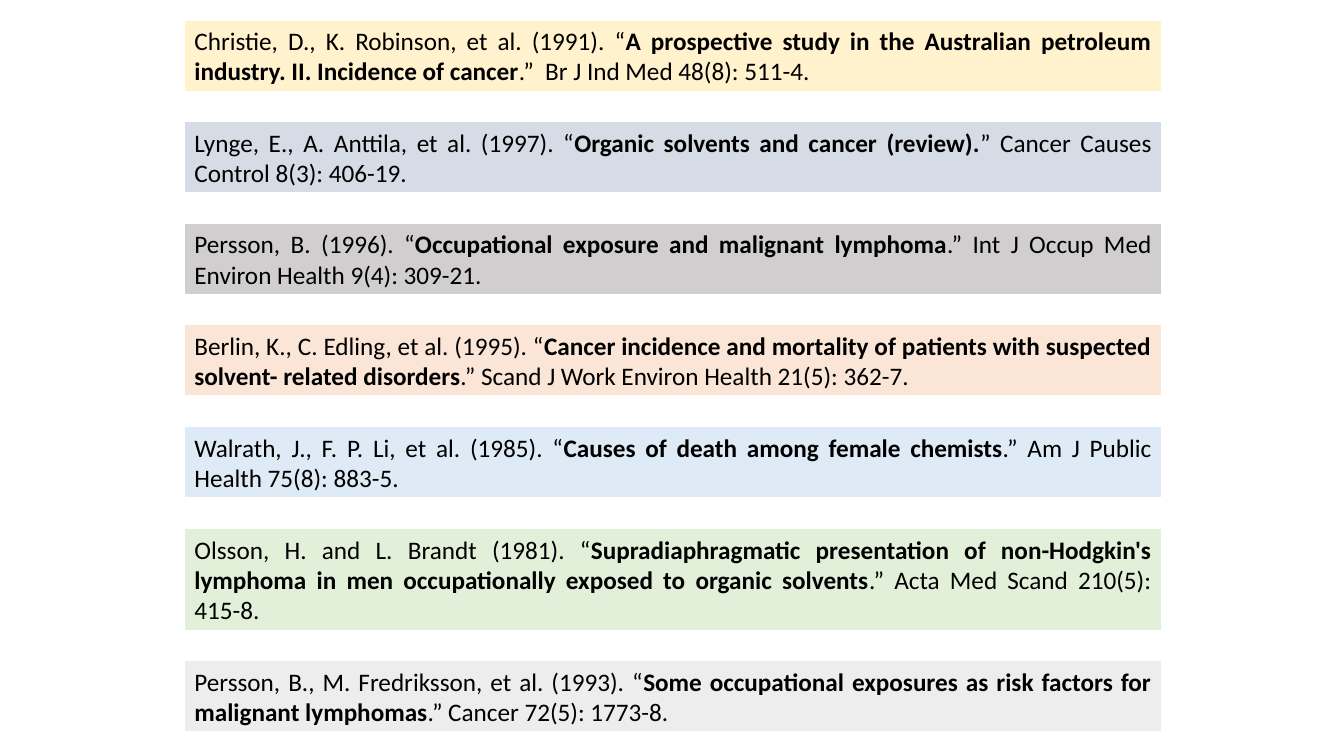
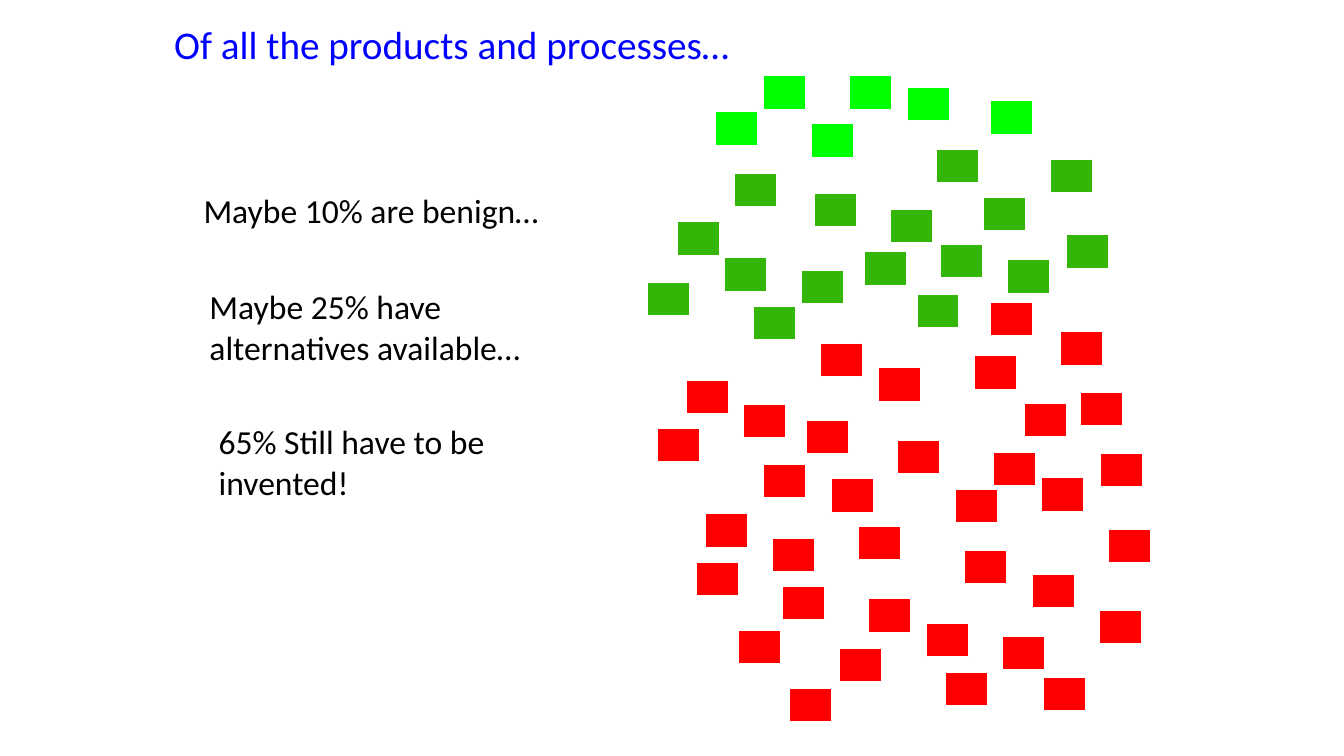
"""Build two slides: solvent and cancer references, and a chart of scattered product tiles."""
from dataclasses import dataclass

from pptx import Presentation
from pptx import util as u
from pptx.dml.color import RGBColor
from pptx.enum import shapes, text

COLOURS = {
    "white": "FFFFFF", "black": "000000", "title": "0000FF",
    "cream": "FFF2CC", "slate": "D6DCE5", "stone": "D0CECE", "peach": "FBE5D6",
    "sky": "DEEBF7", "mint": "E2F0D9", "mist": "EDEDED",
    "benign": "00FF00", "alternative": "34B606", "uninvented": "FF0000",
}
FONT = "Calibri"
SLIDE_WIDTH, SLIDE_HEIGHT = 33.87, 19.05
BAND_LEFT, BAND_TOP, BAND_WIDTH, BAND_GAP = 4.65, 0.51, 24.62, 0.77
BAND_HEIGHTS = {2: 1.79, 3: 2.57}
TILE_WIDTH, TILE_HEIGHT = 1.06, 0.84


@dataclass(frozen=True)
class Reference:
    authors: str
    title: str
    journal: str
    colour: str
    lines: int = 2


@dataclass(frozen=True)
class Frame:
    left: float
    top: float
    width: float
    height: float

    def lengths(self) -> tuple:
        return tuple(u.Cm(side) for side in (self.left, self.top, self.width, self.height))


@dataclass(frozen=True)
class Share:
    lines: tuple
    frame: Frame
    colour: str
    tiles: tuple


REFERENCES = (
    Reference("Christie, D., K. Robinson, et al. (1991). “",
              "A prospective study in the Australian petroleum industry. II. Incidence of cancer",
              ".”  Br J Ind Med 48(8): 511-4.", "cream"),
    Reference("Lynge, E., A. Anttila, et al. (1997). “",
              "Organic solvents and cancer (review).",
              "” Cancer Causes Control 8(3): 406-19.", "slate"),
    Reference("Persson, B. (1996). “",
              "Occupational exposure and malignant lymphoma",
              ".” Int J Occup Med Environ Health 9(4): 309-21.", "stone"),
    Reference("Berlin, K., C. Edling, et al. (1995). “",
              "Cancer incidence and mortality of patients with suspected solvent- related disorders",
              ".” Scand J Work Environ Health 21(5): 362-7.", "peach"),
    Reference("Walrath, J., F. P. Li, et al. (1985). “",
              "Causes of death among female chemists",
              ".” Am J Public Health 75(8): 883-5.", "sky"),
    Reference("Olsson, H. and L. Brandt (1981). “",
              "Supradiaphragmatic presentation of non-Hodgkin's lymphoma in men "
              "occupationally exposed to organic solvents",
              ".” Acta Med Scand 210(5): 415-8.", "mint", 3),
    Reference("Persson, B., M. Fredriksson, et al. (1993). “",
              "Some occupational exposures as risk factors for malignant lymphomas",
              ".” Cancer 72(5): 1773-8.", "mist"),
)

SHARES = (
    Share(("Maybe 10% are benign…",), Frame(4.88, 4.67, 9.04, 1.27), "benign", (
        (22.86, 2.21), (21.41, 1.91), (20.45, 3.12), (18.03, 2.82), (19.25, 1.91),
        (24.97, 2.54),
    )),
    Share(("Maybe 25% have", "alternatives available…"),
          Frame(5.03, 7.09, 8.43, 2.31), "alternative", (
        (23.6, 3.76), (22.43, 5.28), (20.52, 4.88), (20.19, 6.81), (23.11, 7.42),
        (21.79, 6.35), (18.52, 4.37), (18.26, 6.5), (17.07, 5.59), (16.33, 7.11),
        (19, 7.72), (25.4, 6.55), (26.47, 4.01), (24.79, 4.98), (23.7, 6.15),
        (26.87, 5.92),
    )),
    Share(("65% Still have to be", "invented!"),
          Frame(5.26, 10.49, 7.47, 2.31), "uninvented", (
        (22.15, 9.27), (20.68, 8.66), (20.32, 10.59), (22.63, 11.1), (26.72, 8.36),
        (24.56, 8.97), (27.23, 9.88), (18.75, 10.19), (17.3, 9.58), (16.56, 10.8),
        (19.23, 11.71), (26.24, 12.04), (25.04, 11.4), (24.08, 12.34), (25.83, 10.16),
        (19.48, 13.56), (17.78, 12.95), (17.55, 14.17), (19.71, 14.78), (21.64, 13.26),
        (24.31, 13.87), (27.71, 15.39), (26.01, 14.48), (25.27, 16.03), (26.29, 17.07),
        (23.34, 15.7), (21.89, 15.09), (21.16, 16.33), (23.83, 16.94), (20.96, 12.07),
        (18.62, 15.88), (19.89, 17.35), (27.94, 13.34), (27.74, 11.43), (24.97, 7.62),
    )),
)


def rgb(name: str) -> RGBColor:
    return RGBColor.from_string(COLOURS[name])


def add_span(para, words: str, size: float, colour: str = "black", bold: bool = False) -> None:
    span = para.add_run()
    span.text = words
    span.font.name = FONT
    span.font.size = u.Pt(size)
    span.font.bold = bold
    span.font.color.rgb = rgb(colour)


def add_rectangle(holder, frame: Frame, colour: str):
    box = holder.add_shape(shapes.MSO_SHAPE.RECTANGLE, *frame.lengths())
    box.shadow.inherit = False
    box.fill.solid()
    box.fill.fore_color.rgb = rgb(colour)
    box.line.color.rgb = rgb("white")
    box.line.width = u.Pt(0.75)
    return box


def add_text(holder, frame: Frame, lines: tuple, size: float,
             colour: str = "black", wrap: bool = False) -> None:
    body = holder.add_textbox(*frame.lengths()).text_frame
    body.word_wrap = wrap
    body.auto_size = text.MSO_AUTO_SIZE.SHAPE_TO_FIT_TEXT
    for index, line in enumerate(lines):
        para = body.add_paragraph() if index else body.paragraphs[0]
        add_span(para, line, size, colour)


def add_reference(page, reference: Reference, top: float) -> None:
    frame = Frame(BAND_LEFT, top, BAND_WIDTH, BAND_HEIGHTS[reference.lines])
    body = add_rectangle(page.shapes, frame, reference.colour).text_frame
    body.word_wrap = True
    body.auto_size = text.MSO_AUTO_SIZE.SHAPE_TO_FIT_TEXT
    body.vertical_anchor = text.MSO_ANCHOR.MIDDLE
    para = body.paragraphs[0]
    para.alignment = text.PP_ALIGN.JUSTIFY
    add_span(para, reference.authors, 18)
    add_span(para, reference.title, 18, bold=True)
    add_span(para, reference.journal, 18)


def build_references(page) -> None:
    top = BAND_TOP
    for reference in REFERENCES:
        add_reference(page, reference, top)
        top += BAND_HEIGHTS[reference.lines] + BAND_GAP


def build_products(page) -> None:
    add_text(page.shapes, Frame(4.14, 0.38, 25.45, 1.45),
             ("Of all the products and processes…",), 28, "title", wrap=True)
    for share in SHARES:
        group = page.shapes.add_group_shape().shapes
        for left, top in share.tiles:
            add_rectangle(group, Frame(left, top, TILE_WIDTH, TILE_HEIGHT), share.colour)
        add_text(group, share.frame, share.lines, 24)


def main() -> None:
    deck = Presentation()
    deck.slide_width = u.Cm(SLIDE_WIDTH)
    deck.slide_height = u.Cm(SLIDE_HEIGHT)
    blank = deck.slide_layouts[6]
    for build in (build_references, build_products):
        build(deck.slides.add_slide(blank))
    deck.save("out.pptx")


if __name__ == "__main__":
    main()
